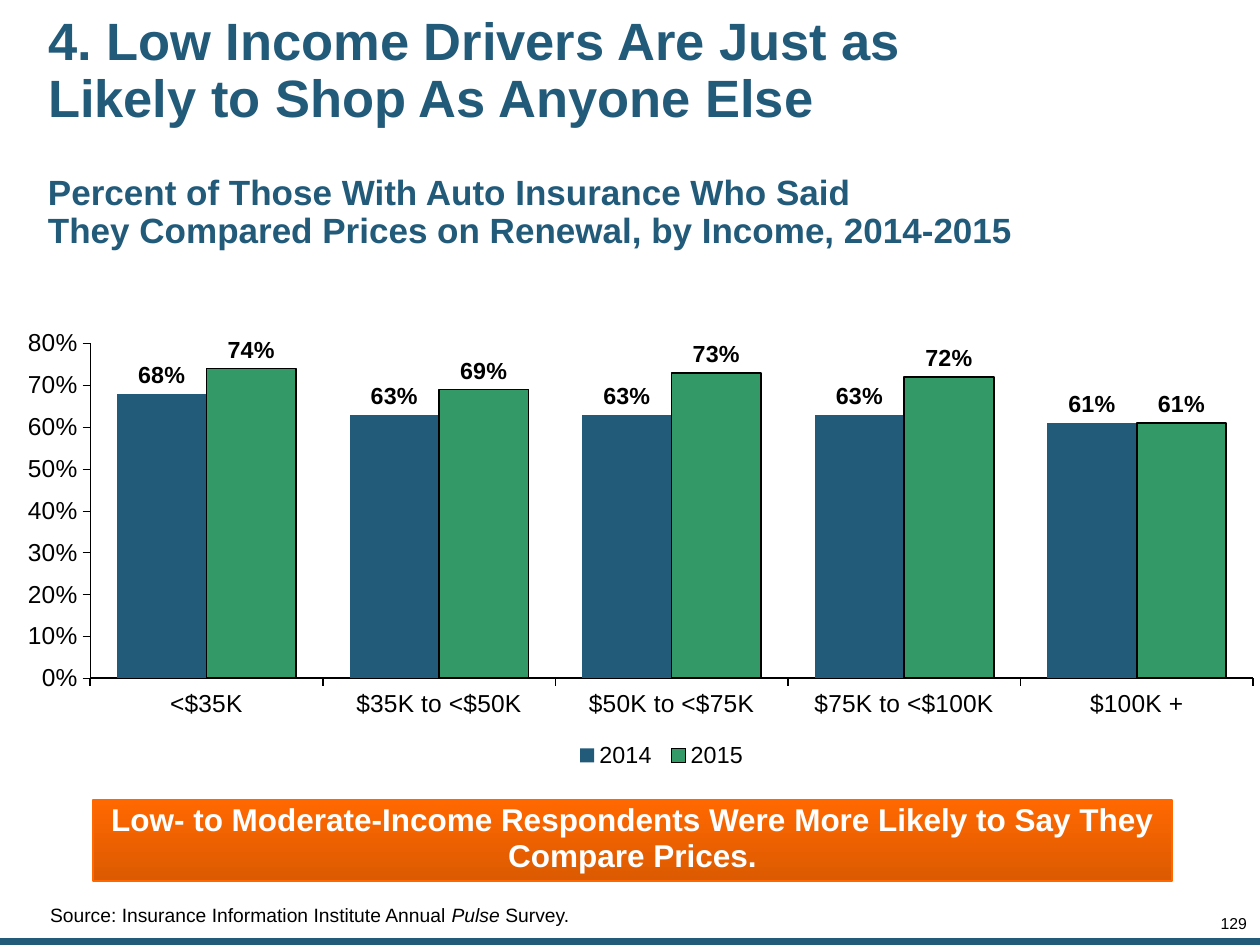
from dataclasses import dataclass
from typing import Optional

from lxml.etree import SubElement
from pptx import Presentation
from pptx.chart.data import CategoryChartData
from pptx.dml.color import RGBColor
from pptx.enum.chart import XL_CHART_TYPE as ChartType
from pptx.enum.chart import XL_LABEL_POSITION as LabelPosition
from pptx.enum.chart import XL_LEGEND_POSITION as LegendPosition
from pptx.enum.chart import XL_TICK_MARK as TickMark
from pptx.enum.shapes import MSO_SHAPE as ShapeType
from pptx.enum.text import MSO_ANCHOR as Anchor
from pptx.enum.text import PP_ALIGN as Align
from pptx.oxml.ns import qn
from pptx.util import Pt

EMU_PER_PX = 914400 / 126
SLIDE_WIDTH, SLIDE_HEIGHT = 1260, 945
FONT = "Arial"
COLORS = {
    "blue": "225A7A",
    "green": "339966",
    "orange": "FF6801",
    "dark_orange": "DC5A01",
    "black": "000000",
    "white": "FFFFFF",
}
CATEGORIES = ["<$35K", "$35K to <$50K", "$50K to <$75K", "$75K to <$100K", "$100K +"]


@dataclass(frozen=True)
class Box:
    left: int
    top: int
    width: int
    height: int


@dataclass(frozen=True)
class TextStyle:
    size: float
    color: str
    spacing: float
    bold: bool = False
    align: Align = Align.LEFT
    anchor: Anchor = Anchor.TOP
    insets: tuple[int, int, int, int] = (0, 0, 0, 0)


@dataclass(frozen=True)
class YearSeries:
    name: str
    values: tuple[float, ...]
    color: str
    outline: Optional[float] = None


SERIES = [
    YearSeries("2014", (0.68, 0.63, 0.63, 0.63, 0.61), "blue"),
    YearSeries("2015", (0.74, 0.69, 0.73, 0.72, 0.61), "green", 0.95),
]


def px(value: int) -> int:
    return round(value * EMU_PER_PX)


def rgb(name: str) -> RGBColor:
    return RGBColor.from_string(COLORS[name])


def bounds(box: Box) -> tuple[int, int, int, int]:
    return px(box.left), px(box.top), px(box.width), px(box.height)


def style_font(font, size: float, color: str, bold: bool = False) -> None:
    font.name = FONT
    font.size = Pt(size)
    font.bold = bold
    font.color.rgb = rgb(color)


def write_text(shape, text: str, style: TextStyle, italic: str = "") -> None:
    frame = shape.text_frame
    frame.word_wrap = True
    frame.vertical_anchor = style.anchor
    frame.margin_left, frame.margin_top, frame.margin_right, frame.margin_bottom = map(
        px, style.insets
    )
    paragraph = frame.paragraphs[0]
    if italic:
        before, after = text.split(italic)
        for part in (before, italic, after):
            run = paragraph.add_run()
            run.text = part
            run.font.italic = part == italic
    else:
        paragraph.text = text
    paragraph.alignment = style.align
    paragraph.line_spacing = style.spacing
    paragraph.space_before = Pt(0)
    for run in paragraph.runs:
        style_font(run.font, style.size, style.color, style.bold)


def add_text(slide, box: Box, text: str, style: TextStyle, italic: str = "") -> None:
    write_text(slide.shapes.add_textbox(*bounds(box)), text, style, italic)


def add_rectangle(slide, box: Box):
    shape = slide.shapes.add_shape(ShapeType.RECTANGLE, *bounds(box))
    shape.shadow.inherit = False
    return shape


def add_banner(slide, box: Box, text: str, style: TextStyle) -> None:
    banner = add_rectangle(slide, box)
    banner.fill.gradient()
    banner.fill.gradient_angle = 270
    for stop, color, position in zip(
        banner.fill.gradient_stops, ("orange", "dark_orange"), (0, 1)
    ):
        stop.color.rgb = rgb(color)
        stop.position = position
    banner.line.color.rgb = rgb("orange")
    banner.line.width = Pt(1)
    write_text(banner, text, style)


def set_layout(element, target: str, x: float, y: float, w: float, h: float) -> None:
    for old_layout in element.findall(qn("c:layout")):
        element.remove(old_layout)
    layout = SubElement(element, qn("c:layout"))
    manual = SubElement(layout, qn("c:manualLayout"))
    settings = {"xMode": "edge", "yMode": "edge", "x": x, "y": y, "w": w, "h": h}
    if target:
        settings = {"layoutTarget": target, **settings}
    for tag, value in settings.items():
        SubElement(manual, qn(f"c:{tag}")).set("val", str(value))
    element.remove(layout)
    element.insert(1 if element.tag == qn("c:legend") else 0, layout)


def style_axis(axis, line_width: float) -> None:
    axis.has_major_gridlines = False
    axis.major_tick_mark = TickMark.OUTSIDE
    axis.minor_tick_mark = TickMark.NONE
    axis.format.line.color.rgb = rgb("black")
    axis.format.line.width = Pt(line_width)
    style_font(axis.tick_labels.font, 14, "black")


def style_series(series, year: YearSeries) -> None:
    series.format.fill.solid()
    series.format.fill.fore_color.rgb = rgb(year.color)
    series.invert_if_negative = False
    if year.outline:
        series.format.line.color.rgb = rgb("black")
        series.format.line.width = Pt(year.outline)
    else:
        series.format.line.fill.background()
    labels = series.data_labels
    labels.show_value = True
    labels.position = LabelPosition.OUTSIDE_END
    labels.number_format = "0%"
    labels.number_format_is_linked = False
    style_font(labels.font, 13.3, "black", True)


def add_income_chart(slide, box: Box) -> None:
    data = CategoryChartData(number_format="0%")
    data.categories = CATEGORIES
    for year in SERIES:
        data.add_series(year.name, year.values)
    chart = slide.shapes.add_chart(ChartType.COLUMN_CLUSTERED, *bounds(box), data).chart
    chart.has_title = False
    style_font(chart.font, 13.3, "black")
    plot = chart.plots[0]
    plot.gap_width = 60
    plot.overlap = 0
    plot.vary_by_categories = False
    for series, year in zip(plot.series, SERIES):
        style_series(series, year)
    style_axis(chart.category_axis, 0.95)
    value_axis = chart.value_axis
    style_axis(value_axis, 0.25)
    value_axis.minimum_scale, value_axis.maximum_scale = 0, 0.8
    value_axis.major_unit = 0.1
    value_axis.tick_labels.number_format = "0%"
    value_axis.tick_labels.number_format_is_linked = False
    chart.has_legend = True
    legend = chart.legend
    legend.position = LegendPosition.TOP
    legend.include_in_layout = False
    style_font(legend.font, 13.3, "black")
    plot_area = chart.element.find(f".//{qn('c:plotArea')}")
    set_layout(plot_area, "inner", 0.066, 0.094, 0.934, 0.663)
    set_layout(chart.element.find(f".//{qn('c:legend')}"), "", 0.45, 0.88, 0.15, 0.06)


def main() -> None:
    presentation = Presentation()
    presentation.slide_width = px(SLIDE_WIDTH)
    presentation.slide_height = px(SLIDE_HEIGHT)
    slide = presentation.slides.add_slide(presentation.slide_layouts[5])
    title = slide.shapes.title
    title.left, title.top, title.width, title.height = bounds(Box(42, 13, 1019, 118))
    write_text(title, "4. Low Income Drivers Are Just as Likely to Shop As Anyone Else",
               TextStyle(30, "blue", 0.9, True, anchor=Anchor.MIDDLE, insets=(6, 6, 6, 6)))
    footer = add_rectangle(slide, Box(0, 938, SLIDE_WIDTH, 7))
    footer.fill.solid()
    footer.fill.fore_color.rgb = rgb("blue")
    footer.line.fill.background()
    add_text(slide, Box(1186, 917, 61, 16), "129", TextStyle(9, "black", 0.85, align=Align.RIGHT))
    add_text(slide, Box(0, 906, 1189, 39),
             "Source: Insurance Information Institute Annual Pulse Survey.",
             TextStyle(11, "black", 0.85, anchor=Anchor.BOTTOM, insets=(50, 0, 0, 19)), "Pulse")
    add_income_chart(slide, Box(8, 296, 1246, 505))
    add_text(slide, Box(48, 175, 1133, 77),
             "Percent of Those With Auto Insurance Who Said\v"
             "They Compared Prices on Renewal, by Income, 2014-2015",
             TextStyle(20, "blue", 0.9, True))
    add_banner(slide, Box(93, 800, 1079, 81),
               "Low- to Moderate-Income Respondents Were More Likely to Say They Compare Prices.",
               TextStyle(18, "white", 0.95, True, Align.CENTER, Anchor.MIDDLE, (13, 6, 13, 9)))
    presentation.save("out.pptx")


if __name__ == "__main__":
    main()
